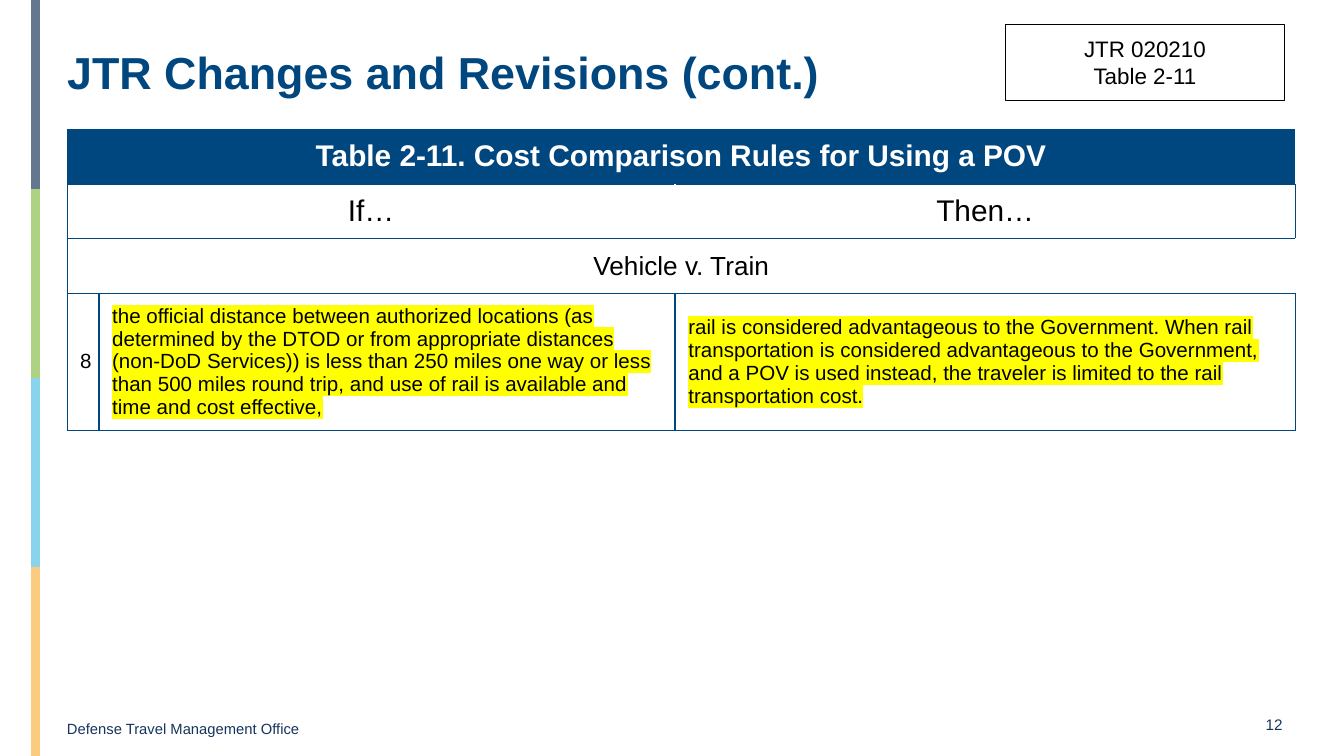
from pptx import Presentation
from pptx.dml.color import RGBColor
from pptx.enum.shapes import MSO_CONNECTOR, MSO_SHAPE
from pptx.enum.text import MSO_ANCHOR, PP_ALIGN
from pptx.oxml.ns import qn
from pptx.util import Pt
from lxml import etree

LEFT, CENTER = PP_ALIGN.LEFT, PP_ALIGN.CENTER
TOP, MIDDLE = MSO_ANCHOR.TOP, MSO_ANCHOR.MIDDLE
STRAIGHT, RECTANGLE = MSO_CONNECTOR.STRAIGHT, MSO_SHAPE.RECTANGLE

WIDTH, HEIGHT = 720, 405
NAVY, INK, BLACK, WHITE, YELLOW = "00467F", "15345D", "000000", "FFFFFF", "FFFF00"

TITLE = "JTR Changes and Revisions (cont.)"
REFERENCE = ["JTR 020210", "Table 2-11"]
FOOTER = "Defense Travel Management Office"
PAGE = "12"
STRIPE_COLORS = ["65778F", "AED182", "8AD3ED", "FACC80"]
COLUMN_WIDTHS = [16.9, 308.7, 332.4]
ROW_HEIGHTS = [29.3, 29.3, 29.3, 68.4]
HEADING = dict(size=16, color=WHITE, bold=True, align=CENTER)
CONDITION = dict(size=16, align=CENTER)
SECTION = dict(size=14, align=CENTER)
NUMBER = dict(size=11, align=CENTER, insets=(5, 3.6, 2, 3.6))
RULE = dict(size=11, highlight=YELLOW)
ROWS = [
    [(0, 2, "Table 2-11. Cost Comparison Rules for Using a POV", HEADING)],
    [(0, 1, "If…", CONDITION), (2, 2, "Then…", CONDITION)],
    [(0, 2, "Vehicle v. Train", SECTION)],
    [
        (0, 0, "8", NUMBER),
        (1, 1, "the official distance between authorized locations (as determined by "
               "the DTOD or from appropriate distances (non-DoD Services)) is less than "
               "250 miles one way or less than 500 miles round trip, and use of rail is "
               "available and time and cost effective,", RULE),
        (2, 2, "rail is considered advantageous to the Government. When rail "
               "transportation is considered advantageous to the Government, and a POV "
               "is used instead, the traveler is limited to the rail transportation "
               "cost.", RULE),
    ],
]


def rgb(value):
    return RGBColor.from_string(value)


def write(holder, lines, size, color=BLACK, bold=False, align=LEFT, anchor=MIDDLE,
          insets=(7.2, 3.6, 7.2, 3.6), highlight=None):
    frame = holder.text_frame
    frame.word_wrap = True
    area = holder if hasattr(holder, "margin_left") else frame
    area.vertical_anchor = anchor
    area.margin_left, area.margin_top, area.margin_right, area.margin_bottom = map(Pt, insets)
    for index, line in enumerate([lines] if isinstance(lines, str) else lines):
        paragraph = frame.paragraphs[0] if index == 0 else frame.add_paragraph()
        paragraph.alignment = align
        run = paragraph.add_run()
        run.text = line
        run.font.size, run.font.bold, run.font.name = Pt(size), bold, "Arial"
        run.font.color.rgb = rgb(color)
        if highlight:
            mark = etree.Element(qn("a:highlight"))
            etree.SubElement(mark, qn("a:srgbClr"), val=highlight)
            run.font._element.find(qn("a:solidFill")).addnext(mark)


def add_border(cell, side, width):
    properties = cell._tc.get_or_add_tcPr()
    border = etree.SubElement(properties, qn("a:ln" + side), w=str(Pt(width)))
    fill = etree.SubElement(border, qn("a:solidFill"))
    etree.SubElement(fill, qn("a:srgbClr"), val=NAVY)


def add_stripes(slide):
    length = HEIGHT / len(STRIPE_COLORS)
    for index, color in enumerate(STRIPE_COLORS):
        stripe = slide.shapes.add_connector(
            STRAIGHT, Pt(19.2), Pt(index * length), Pt(19.2), Pt((index + 1) * length))
        stripe.line.color.rgb = rgb(color)
        stripe.line.width = Pt(5)
        etree.SubElement(stripe._element.spPr, qn("a:effectLst"))


def add_rules_table(slide):
    table = slide.shapes.add_table(
        len(ROW_HEIGHTS), len(COLUMN_WIDTHS), Pt(36), Pt(69.3),
        Pt(sum(COLUMN_WIDTHS)), Pt(sum(ROW_HEIGHTS))).table
    table.first_row = table.horz_banding = False
    for column, width in zip(table.columns, COLUMN_WIDTHS):
        column.width = Pt(width)
    for row, height in zip(table.rows, ROW_HEIGHTS):
        row.height = Pt(height)

    last_row, last_column = len(ROW_HEIGHTS) - 1, len(COLUMN_WIDTHS) - 1
    for row, entries in enumerate(ROWS):
        for column in range(last_column + 1):
            cell = table.cell(row, column)
            for side, outer_column in (("L", 0), ("R", last_column)):
                if column == outer_column:
                    add_border(cell, side, 0.5)
                elif row == last_row:
                    add_border(cell, side, 1)
            for side in "TB":
                add_border(cell, side, 0.5)
            if row == 0:
                cell.fill.solid()
                cell.fill.fore_color.rgb = rgb(NAVY)
            else:
                cell.fill.background()
        for first, last, text, style in entries:
            cell = table.cell(row, first)
            if last > first:
                cell.merge(table.cell(row, last))
            write(cell, text, **style)


def main():
    deck = Presentation()
    deck.slide_width, deck.slide_height = Pt(WIDTH), Pt(HEIGHT)
    slide = deck.slides.add_slide(deck.slide_layouts[5])

    footer = slide.shapes.add_textbox(Pt(28.8), Pt(382.3), Pt(643.7), Pt(16.6))
    write(footer, FOOTER, 7.9, color=INK, anchor=TOP)
    add_stripes(slide)

    title = slide.shapes.title
    title.left, title.top, title.width, title.height = map(Pt, (36, 21.6, 657.4, 39.6))
    write(title, TITLE, 24, color=NAVY, bold=True, anchor=TOP, insets=(0, 2.5, 0, 0))

    page = slide.shapes.add_textbox(Pt(671.8), Pt(383), Pt(21.6), Pt(13.7))
    write(page, PAGE, 8.2, color=INK, align=CENTER, anchor=TOP, insets=(0, 0, 0, 0))

    add_rules_table(slide)

    reference = slide.shapes.add_shape(RECTANGLE, Pt(538.5), Pt(13), Pt(149.8), Pt(41))
    reference.shadow.inherit = False
    reference.fill.background()
    reference.line.color.rgb = rgb(BLACK)
    reference.line.width = Pt(0.75)
    write(reference, REFERENCE, 12, align=CENTER, insets=(7.2, 7.2, 7.2, 7.2))

    deck.save("out.pptx")


if __name__ == "__main__":
    main()
